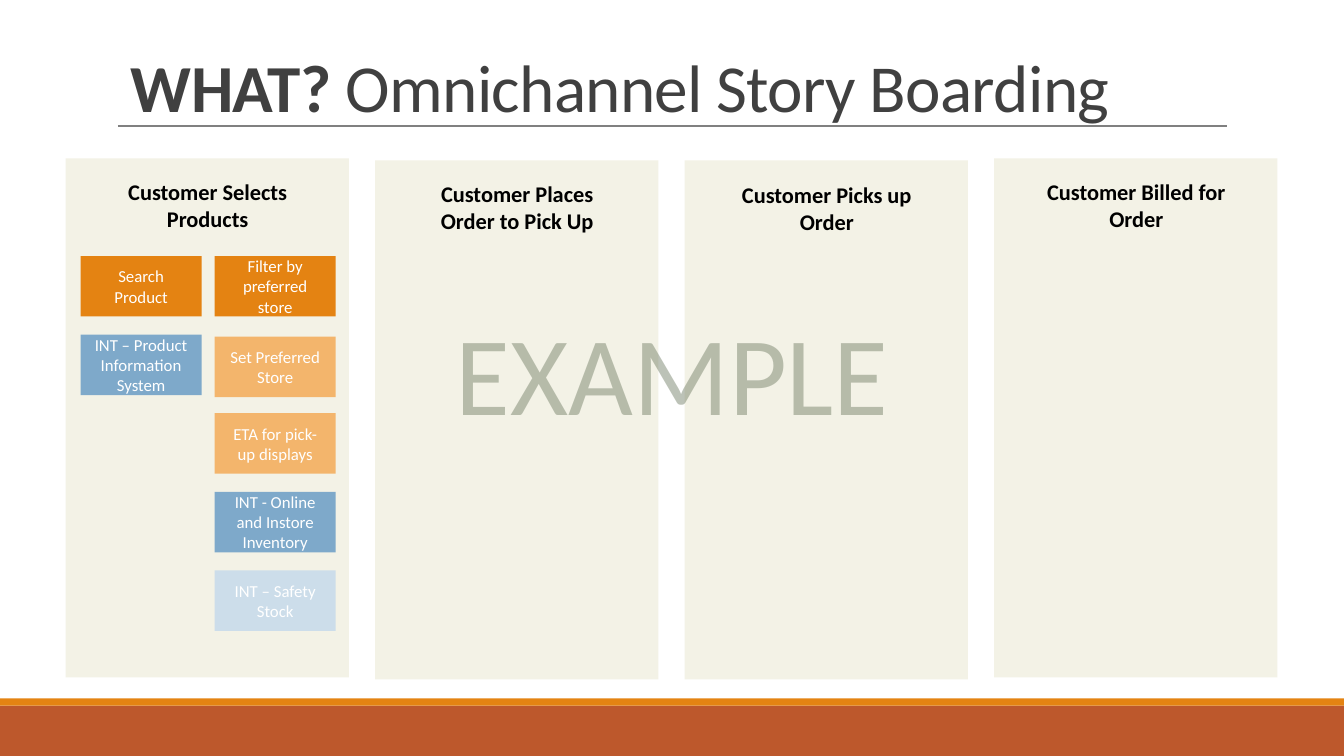
from pptx import Presentation
from pptx.dml.color import RGBColor
from pptx.enum.shapes import MSO_CONNECTOR, MSO_SHAPE
from pptx.enum.text import MSO_ANCHOR, PP_ALIGN
from pptx.oxml.ns import qn
from pptx.util import Inches, Pt
from lxml import etree

RECT = MSO_SHAPE.RECTANGLE
LINE = MSO_CONNECTOR.STRAIGHT
LEFT, CENTER = PP_ALIGN.LEFT, PP_ALIGN.CENTER
TOP, MIDDLE = MSO_ANCHOR.TOP, MSO_ANCHOR.MIDDLE

BLACK = RGBColor(0x00, 0x00, 0x00)
WHITE = RGBColor(0xFF, 0xFF, 0xFF)
DARK = RGBColor(0x40, 0x40, 0x40)
GRAY = RGBColor(0x80, 0x80, 0x80)
SAGE = RGBColor(0x6F, 0x7B, 0x63)
CREAM = RGBColor(0xF3, 0xF2, 0xE6)
RUST = RGBColor(0xBD, 0x58, 0x2C)
ORANGE = RGBColor(0xE4, 0x83, 0x12)
PEACH = RGBColor(0xF3, 0xB5, 0x6C)
BLUE = RGBColor(0x7E, 0xA9, 0xCA)
PALE = RGBColor(0xCC, 0xDD, 0xEA)

# Content
TITLE = [("WHAT? ", True), ("Omnichannel Story Boarding", False)]
STAMP = "EXAMPLE"

# Stage heading, panel top, heading top
STAGES = [
    ("Customer Selects Products", 1.57, 1.72),
    ("Customer Places Order to Pick Up", 1.59, 1.74),
    ("Customer Picks up Order", 1.59, 1.75),
    ("Customer Billed for Order", 1.57, 1.72),
]

# Card text, column, row, nudge down, fill
CARDS = [
    ("Search Product", 0, 0, 0, ORANGE),
    ("INT – Product Information System", 0, 1, 0, BLUE),
    ("Filter by preferred store", 1, 0, 0, ORANGE),
    ("Set Preferred Store", 1, 1, 0.02, PEACH),
    ("ETA for pick-up displays", 1, 2, 0, PEACH),
    ("INT - Online and Instore Inventory", 1, 3, 0, BLUE),
    ("INT – Safety Stock", 1, 4, 0, PALE),
]

# Left edge and step of panels; left, top and steps of cards
STAGE_X, STAGE_STEP = 0.65, 3.07
CARD_X, CARD_Y, CARD_DX, CARD_DY = 0.8, 2.54, 1.33, 0.78

prs = Presentation()
prs.slide_width, prs.slide_height = Inches(13.33), Inches(7.5)
slide = prs.slides.add_slide(prs.slide_layouts[6])
shapes = slide.shapes


def add_box(x, y, w, h, fill):
    box = shapes.add_shape(RECT, Inches(x), Inches(y), Inches(w), Inches(h))
    box.shadow.inherit = False
    box.fill.solid()
    box.fill.fore_color.rgb = fill
    box.line.fill.background()
    return box


def add_area(x, y, w, h):
    return shapes.add_textbox(Inches(x), Inches(y), Inches(w), Inches(h))


def write(shape, runs, size, color, align=CENTER, anchor=TOP,
          space=None, track=None, alpha=None):
    """Fill a shape with one paragraph of (text, bold) runs."""
    frame = shape.text_frame
    frame.word_wrap = True
    frame.vertical_anchor = anchor
    para = frame.paragraphs[0]
    para.alignment = align
    if space:
        para.line_spacing = space
    for text, bold in runs:
        run = para.add_run()
        run.text = text
        font = run.font
        font.name, font.size, font.bold = "Calibri", Pt(size), bold
        font.color.rgb = color
        props = run._r.get_or_add_rPr()
        if track:
            props.set("spc", str(int(track * 100)))
        if alpha:
            tint = props.find(".//" + qn("a:srgbClr"))
            etree.SubElement(tint, qn("a:alpha")).set("val", str(alpha * 1000))


# Footer bands
add_box(0, 7, 13.33, 0.5, RUST)
add_box(0, 6.93, 13.33, 0.07, ORANGE)

# Title and its rule
rule = shapes.add_connector(LINE, Inches(1.17), Inches(1.25),
                            Inches(12.17), Inches(1.25))
rule.line.color.rgb = GRAY
rule.line.width = Pt(1.5)
etree.SubElement(rule._element.spPr, qn("a:effectLst"))
write(add_area(1.2, 0.47, 11, 0.88), TITLE, 48, DARK, align=LEFT,
      anchor=MIDDLE, space=0.85, track=-0.5)

# Stage panels with headings
for col, (text, top, head) in enumerate(STAGES):
    x = STAGE_X + col * STAGE_STEP
    add_box(x, top, 2.81, 5.15, CREAM)
    write(add_area(x + 0.4, head, 2.02, 0.64), [(text, True)], 16, BLACK)

# Large stamp across the panels
write(add_area(3, 2.96, 7.34, 1.45), [(STAMP, False)], 80, SAGE, alpha=46)

# Cards of the first stage
for text, col, row, nudge, fill in CARDS:
    card = add_box(CARD_X + col * CARD_DX, CARD_Y + row * CARD_DY + nudge,
                   1.2, 0.6, fill)
    write(card, [(text, False)], 12, WHITE, anchor=MIDDLE)

prs.save("out.pptx")
